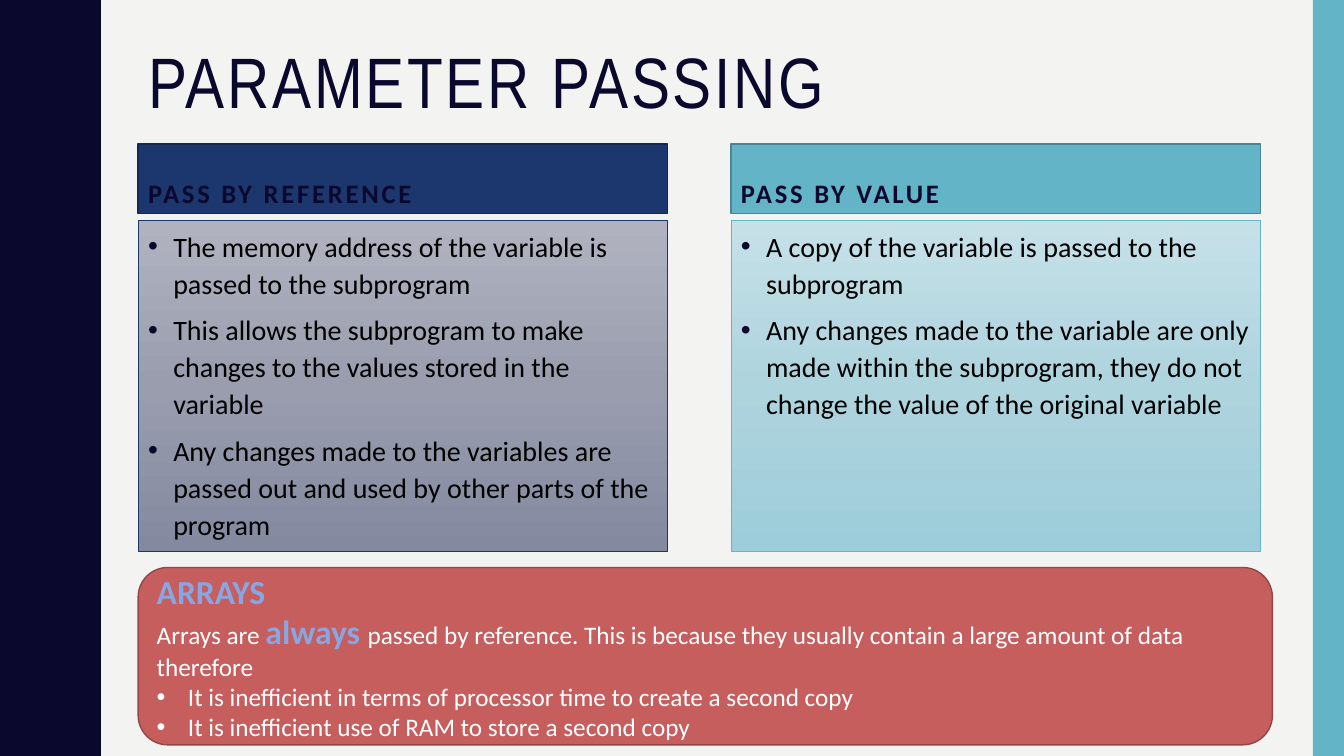
from copy import deepcopy

from lxml import etree
from pptx import Presentation
from pptx.dml.color import RGBColor
from pptx.enum import shapes, text
from pptx.oxml.ns import qn
from pptx.util import Inches, Pt

NAVY = RGBColor(0x0B, 0x08, 0x2E)
PAPER = RGBColor(0xF3, 0xF3, 0xF2)
BLUE = RGBColor(0x1B, 0x37, 0x6E)
BLUE_EDGE = RGBColor(0x14, 0x29, 0x51)
TEAL = RGBColor(0x62, 0xB4, 0xC6)
TEAL_EDGE = RGBColor(0x49, 0x85, 0x92)
RED = RGBColor(0xC6, 0x5E, 0x5E)
RED_EDGE = RGBColor(0x92, 0x46, 0x46)
SKY = RGBColor(0x87, 0xA6, 0xE2)
BLACK = RGBColor(0, 0, 0)
WHITE = RGBColor(0xFF, 0xFF, 0xFF)
BLUE_FADE = [RGBColor.from_string(c) for c in ("B0B3BF", "9A9DAE", "8489A0")]
TEAL_FADE = [RGBColor.from_string(c) for c in ("C6E0E8", "AED4DE", "9DCDDA")]

HALF_WAVE = [(0.78, 0), (0.78, 0.07), (0.79, 0.14), (0.8, 0.2), (0.81, 0.25),
             (0.83, 0.29), (0.85, 0.33), (0.87, 0.38), (0.89, 0.42),
             (0.91, 0.46), (0.93, 0.5), (0.95, 0.55), (0.96, 0.61),
             (0.97, 0.68), (0.97, 0.75)]
PERIOD = 1.5


def add_run(p, words, size, color, bold=False, font="Calibri", spacing=0):
    r = p.add_run()
    r.text = words
    f = r.font
    f.name, f.size, f.bold = font, Pt(size), bold
    f.color.rgb = color
    if spacing:
        r._r.get_or_add_rPr().set("spc", str(spacing * 100))
    return r


def outline(r, color, width):
    ln = etree.Element(qn("a:ln"), w=str(Pt(width)))
    fill = etree.SubElement(ln, qn("a:solidFill"))
    etree.SubElement(fill, qn("a:srgbClr"), val=str(color))
    r._r.get_or_add_rPr().insert(0, ln)


def bullet(p, indent, color):
    pPr = p._p.get_or_add_pPr()
    pPr.set("marL", str(Inches(indent)))
    pPr.set("indent", str(-Inches(indent)))
    clr = etree.SubElement(pPr, qn("a:buClr"))
    etree.SubElement(clr, qn("a:srgbClr"), val=str(color))
    etree.SubElement(pPr, qn("a:buFont"), typeface="Arial")
    etree.SubElement(pPr, qn("a:buChar"), char="•")


def next_paragraph(tf):
    p = tf.paragraphs[0]
    if p.runs:
        p = tf.add_paragraph()
    p.alignment = text.PP_ALIGN.LEFT
    return p


def paint(sp, fill, edge=None, width=1):
    sp.shadow.inherit = False
    sp.fill.solid()
    sp.fill.fore_color.rgb = fill
    if edge is None:
        sp.line.fill.background()
    else:
        sp.line.color.rgb = edge
        sp.line.width = Pt(width)


def fade(sp, colors):
    sp.fill.gradient()
    sp.fill.gradient_angle = 270
    first = sp._element.spPr.find(qn("a:gradFill")).find(qn("a:gsLst"))[0]
    middle = deepcopy(first)
    middle.set("pos", "50000")
    first.addnext(middle)
    for stop, color in zip(sp.fill.gradient_stops, colors):
        stop.color.rgb = color


def add_panel(s, x, y, w, h, anchor, kind=shapes.MSO_SHAPE.RECTANGLE):
    sp = s.shapes.add_shape(kind, Inches(x), Inches(y), Inches(w), Inches(h))
    sp.text_frame.word_wrap = True
    sp.text_frame.vertical_anchor = anchor
    return sp


def add_frame(s, w, h):
    points = []
    for i in range(int(h / PERIOD)):
        top = i * PERIOD
        points += [(x, top + y) for x, y in HALF_WAVE]
        points += [(x, top + PERIOD - y) for x, y in HALF_WAVE[-2::-1]]
    fb = s.shapes.build_freeform(0, 0, scale=Inches(1))
    fb.add_line_segments(points + [(0, h)], close=True)
    paint(fb.convert_to_shape(), NAVY)
    bar = 0.31
    paint(add_panel(s, w - bar, 0, bar, h, text.MSO_ANCHOR.MIDDLE), TEAL)


def add_title(s, x, y, w, h, words):
    sp = s.shapes.add_textbox(Inches(x), Inches(y), Inches(w), Inches(h))
    tf = sp.text_frame
    tf.word_wrap = True
    p = next_paragraph(tf)
    p.line_spacing = 0.9
    add_run(p, words, 51, NAVY, font="Arial Narrow", spacing=2)


def add_column(s, x, y, w, h, heading, points, color, edge, colors):
    head_h, gap = 0.69, 0.07
    head = add_panel(s, x, y, w, head_h, text.MSO_ANCHOR.BOTTOM)
    paint(head, color, edge)
    p = next_paragraph(head.text_frame)
    p.space_before = Pt(7)
    add_run(p, heading, 19, NAVY, bold=True, spacing=2)

    top = head_h + gap
    body = add_panel(s, x, y + top, w, h - top, text.MSO_ANCHOR.TOP)
    paint(body, color, color, 0.5)
    fade(body, colors)
    for point in points:
        p = next_paragraph(body.text_frame)
        p.line_spacing = 1.1
        p.space_before = Pt(7)
        bullet(p, 0.25, NAVY)
        add_run(p, point, 20, BLACK)


def add_arrays_note(s, x, y, w, h):
    sp = add_panel(s, x, y, w, h, text.MSO_ANCHOR.MIDDLE,
                   shapes.MSO_SHAPE.ROUNDED_RECTANGLE)
    paint(sp, RED, RED_EDGE)
    tf = sp.text_frame
    p = next_paragraph(tf)
    outline(add_run(p, "ARRAYS", 24, SKY, bold=True), BLUE, 1.75)
    p = next_paragraph(tf)
    add_run(p, "Arrays are ", 18, WHITE)
    outline(add_run(p, "always ", 24, SKY, bold=True), BLUE, 1.75)
    add_run(p, "passed by reference. This is because they usually contain "
               "a large amount of data therefore", 18, WHITE)
    for point in (
            "It is inefficient in terms of processor time to create a second copy",
            "It is inefficient use of RAM to store a second copy"):
        p = next_paragraph(tf)
        bullet(p, 0.31, WHITE)
        add_run(p, point, 18, WHITE)


def main():
    w, h = 13.33, 7.5
    prs = Presentation()
    prs.slide_width, prs.slide_height = Inches(w), Inches(h)
    s = prs.slides.add_slide(prs.slide_layouts[6])
    s.background.fill.solid()
    s.background.fill.fore_color.rgb = PAPER
    left = 1.37
    add_frame(s, w, h)
    add_title(s, left, 0.42, 11.12, 1.63, "PARAMETER PASSING")
    add_column(s, left, 1.43, 5.25, 4.04, "PASS BY REFERENCE", [
        "The memory address of the variable is passed to the subprogram",
        "This allows the subprogram to make changes to the values stored "
        "in the variable",
        "Any changes made to the variables are passed out and used by "
        "other parts of the program",
    ], BLUE, BLUE_EDGE, BLUE_FADE)
    add_column(s, 7.25, 1.43, 5.25, 4.04, "PASS BY VALUE", [
        "A copy of the variable is passed to the subprogram",
        "Any changes made to the variable are only made within the "
        "subprogram, they do not change the value of the original variable",
    ], TEAL, TEAL_EDGE, TEAL_FADE)
    add_arrays_note(s, left, 5.63, 11.25, 1.76)
    prs.save("out.pptx")


if __name__ == "__main__":
    main()
